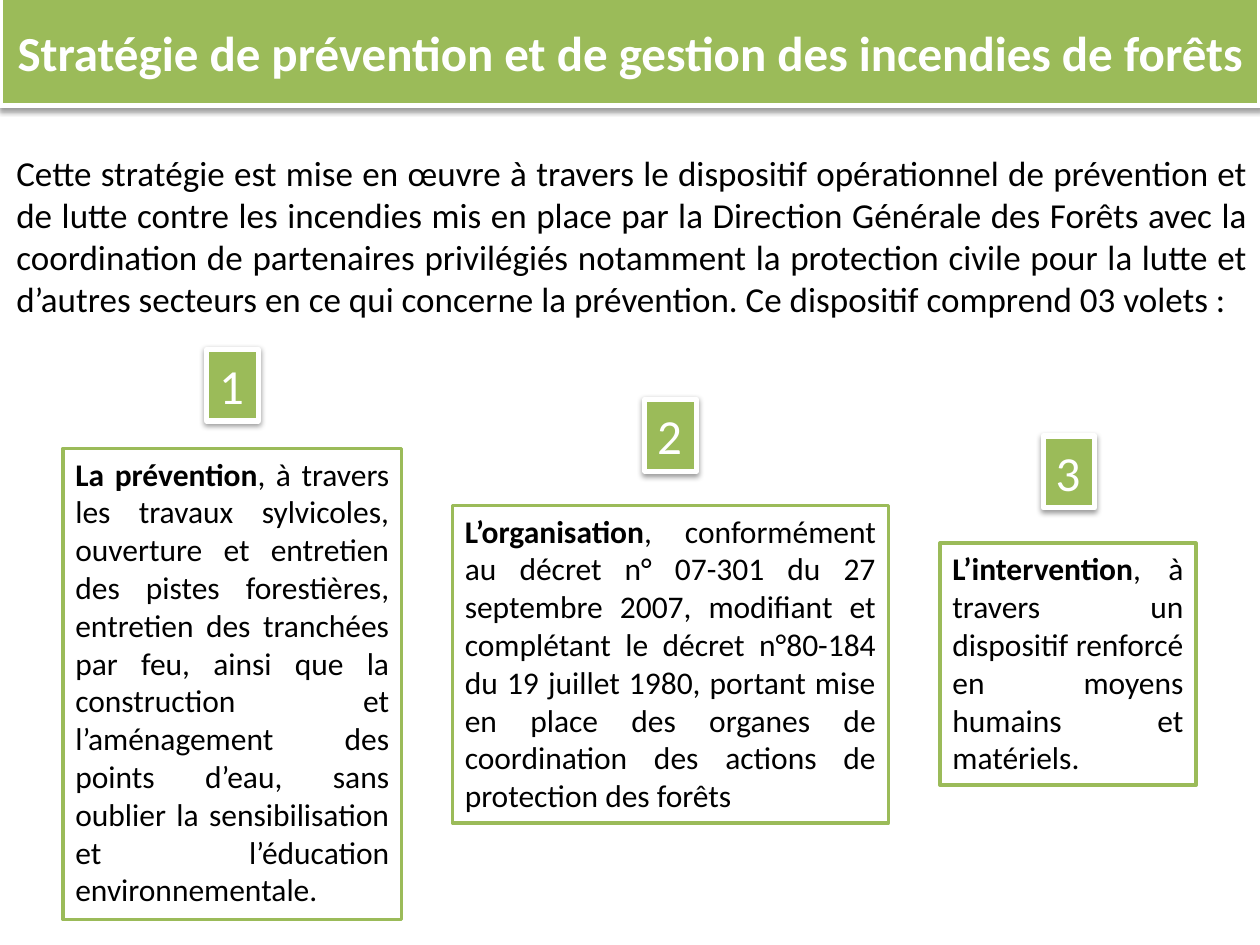
from lxml import etree
from pptx import Presentation
from pptx import util as u
from pptx.dml.color import RGBColor
from pptx.enum import shapes, text
from pptx.oxml import ns

# Content; boxes are (left, top, width, height) in cm
TITLE = "Stratégie de prévention et de gestion des incendies de forêts"
INTRO = (
    "Cette stratégie est mise en œuvre à travers le dispositif opérationnel de "
    "prévention et de lutte contre les incendies mis en place par la Direction "
    "Générale des Forêts avec la coordination de partenaires privilégiés notamment "
    "la protection civile pour la lutte et d’autres secteurs en ce qui concerne la "
    "prévention. Ce dispositif comprend 03 volets :"
)
PILLARS = [
    {"name": "La prévention", "box": (1.27, 9.04, 6.83, 9.5), "badge": (4.17, 7.04),
     "detail": ", à travers les travaux sylvicoles, ouverture et entretien des pistes "
               "forestières, entretien des tranchées par feu, ainsi que la construction "
               "et l’aménagement des points d’eau, sans oublier la sensibilisation et "
               "l’éducation environnementale."},
    {"name": "L’organisation", "box": (9.12, 10.19, 8.79, 6.4), "badge": (13.0, 8.05),
     "detail": ", conformément au décret n° 07-301 du 27 septembre 2007, modifiant et "
               "complétant le décret n°80-184 du 19 juillet 1980, portant mise en place "
               "des organes de coordination des actions de protection des forêts"},
    {"name": "L’intervention", "box": (18.95, 10.95, 5.16, 4.88), "badge": (21.03, 8.79),
     "detail": ", à travers un dispositif renforcé en moyens humains et matériels. "},
]
TITLE_BOX = (0, -0.05, 25.4, 2.18)
INTRO_BOX = (0.08, 2.92, 25.32, 3.68)
BADGE_SIZE = (1.04, 1.45)

# Formats
COLORS = {"green": "9BBB59", "white": "FFFFFF", "black": "000000"}
ALIGN = text.PP_ALIGN
BANNER = {"fill": "green", "line": "white", "weight": 3, "shadow": True}
CARD = {"fill": "white", "line": "green", "weight": 2, "shadow": False}
FRAME = {"word_wrap": True, "vertical_anchor": text.MSO_ANCHOR.TOP}


def rgb(name):
    return RGBColor.from_string(COLORS[name])


def write(shape, runs, size, color, align, **frame_format):
    """Fill a shape with one paragraph of (text, bold) runs."""
    frame = shape.text_frame
    for name, value in {**FRAME, **frame_format}.items():
        setattr(frame, name, value)
    paragraph = frame.paragraphs[0]
    paragraph.alignment = align
    for content, bold in runs:
        run = paragraph.add_run()
        run.text = content
        font_format = {"name": "Calibri", "size": u.Pt(size), "bold": bold}
        for name, value in font_format.items():
            setattr(run.font, name, value)
        run.font.color.rgb = rgb(color)


def add_soft_shadow(shape):
    effects = shape.element.spPr.find(ns.qn("a:effectLst"))
    shadow = etree.SubElement(effects, ns.qn("a:outerShdw"), blurRad="40000",
                              dist="20000", dir="5400000", rotWithShape="0")
    color = etree.SubElement(shadow, ns.qn("a:srgbClr"), val=COLORS["black"])
    etree.SubElement(color, ns.qn("a:alpha"), val="38000")


def add_box(slide, box, style):
    shape = slide.shapes.add_shape(shapes.MSO_SHAPE.RECTANGLE, *map(u.Cm, box))
    shape.fill.solid()
    shape.fill.fore_color.rgb = rgb(style["fill"])
    shape.line.color.rgb = rgb(style["line"])
    shape.line.width = u.Pt(style["weight"])
    shape.shadow.inherit = False
    if style["shadow"]:
        add_soft_shadow(shape)
    return shape


def main():
    presentation = Presentation()
    presentation.slide_width, presentation.slide_height = u.Cm(25.4), u.Cm(19.05)
    slide = presentation.slides.add_slide(presentation.slide_layouts[6])
    grow = {"auto_size": text.MSO_AUTO_SIZE.SHAPE_TO_FIT_TEXT}

    # Title banner
    write(add_box(slide, TITLE_BOX, BANNER), [(TITLE, True)], 28, "white",
          ALIGN.CENTER, vertical_anchor=text.MSO_ANCHOR.MIDDLE)

    # Introduction
    intro = slide.shapes.add_textbox(*map(u.Cm, INTRO_BOX))
    write(intro, [(INTRO, False)], 20, "black", ALIGN.JUSTIFY, **grow)

    # Numbered pillars
    for number, pillar in enumerate(PILLARS, start=1):
        card = add_box(slide, pillar["box"], CARD)
        runs = [(pillar["name"], True), (pillar["detail"], False)]
        write(card, runs, 18, "black", ALIGN.JUSTIFY, **grow)
        badge = add_box(slide, pillar["badge"] + BADGE_SIZE, BANNER)
        write(badge, [(str(number), False)], 28, "white", ALIGN.LEFT, **grow)

    presentation.save("out.pptx")


if __name__ == "__main__":
    main()
